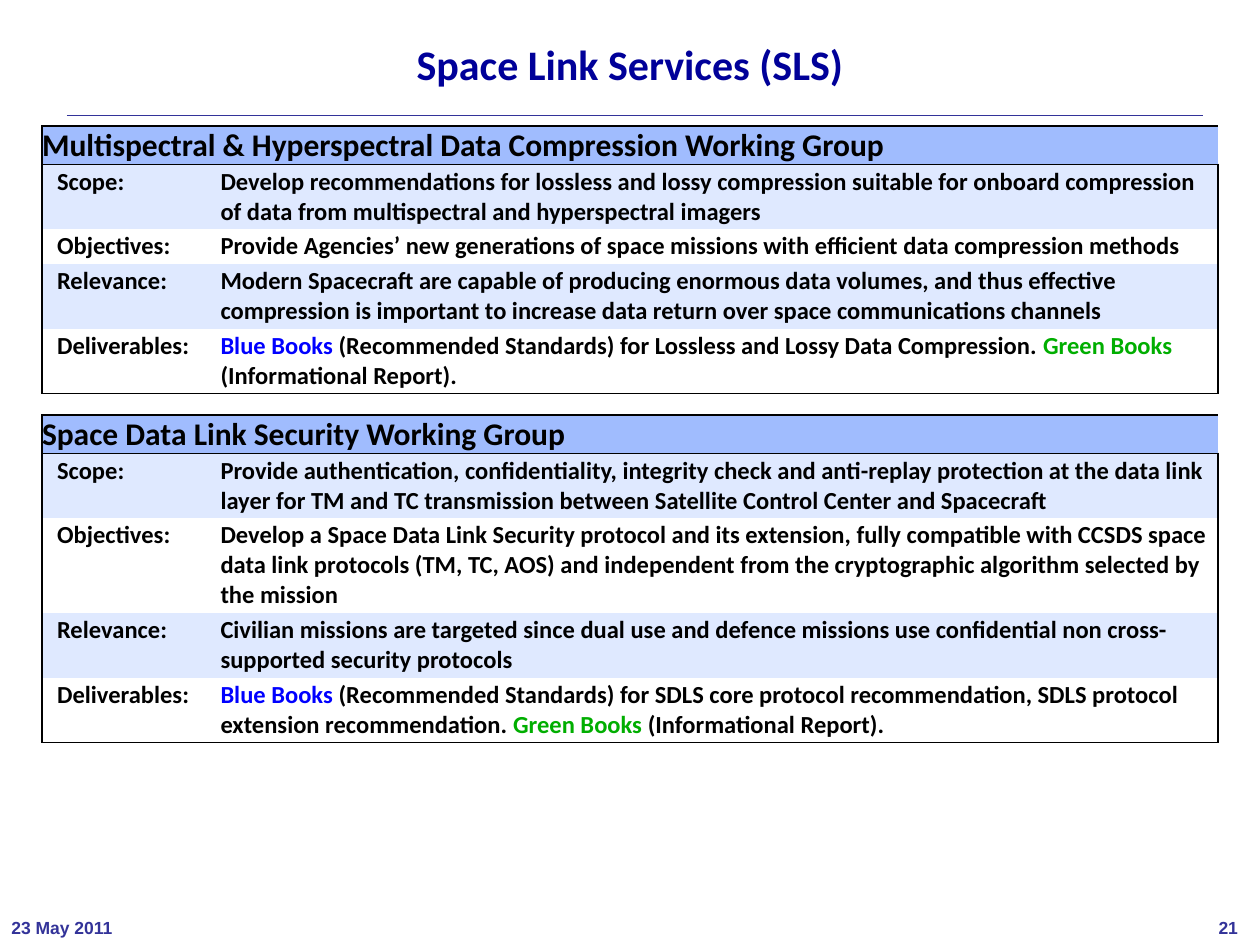
from dataclasses import dataclass

from lxml import etree
from pptx import Presentation
from pptx.dml.color import RGBColor
from pptx.enum.shapes import MSO_CONNECTOR
from pptx.enum.text import MSO_ANCHOR, PP_ALIGN
from pptx.oxml.ns import qn
from pptx.util import Pt

STRAIGHT = MSO_CONNECTOR.STRAIGHT
CENTER = PP_ALIGN.CENTER
TOP = MSO_ANCHOR.TOP


@dataclass(frozen=True)
class Theme:
    body_font: str = "Calibri"
    footer_font: str = "Arial"
    title: str = "000099"
    footer: str = "333399"
    text: str = "000000"
    blue_book: str = "0000FF"
    green_book: str = "00AE00"
    heading_fill: str = "A0BCFE"
    band_fill: str = "DFE9FF"
    border: str = "000000"
    title_size: int = 24
    heading_size: int = 18
    body_size: int = 14
    footer_size: int = 10
    gap_size: int = 10


THEME = Theme()


def deliverables(standards):
    return [
        ("Blue Books ", THEME.blue_book),
        (f"(Recommended Standards) for {standards}. ", THEME.text),
        ("Green Books ", THEME.green_book),
        ("(Informational Report).", THEME.text),
    ]


def plain(text):
    return [(text, THEME.text)]


TITLE = "Space Link Services (SLS)"
LABELS = ["Scope:", "Objectives:", "Relevance:", "Deliverables:"]
# Each group: heading, then (number of text lines, spans) for each label
GROUPS = [
    ("Multispectral & Hyperspectral Data Compression Working Group", [
        (2, plain("Develop recommendations for lossless and lossy compression suitable for "
                  "onboard compression of data from multispectral and hyperspectral imagers")),
        (1, plain("Provide Agencies’ new generations of space missions with efficient data "
                  "compression methods")),
        (2, plain("Modern Spacecraft are capable of producing enormous data volumes, and thus "
                  "effective compression is important to increase data return over space "
                  "communications channels")),
        (2, deliverables("Lossless and Lossy Data Compression")),
    ]),
    ("Space Data Link Security Working Group", [
        (2, plain("Provide authentication, confidentiality, integrity check and anti-replay "
                  "protection at the data link layer for TM and TC transmission between "
                  "Satellite Control Center and Spacecraft")),
        (3, plain("Develop a Space Data Link Security protocol and its extension, fully "
                  "compatible with CCSDS space data link protocols (TM, TC, AOS) and independent "
                  "from the cryptographic algorithm selected by the mission")),
        (2, plain("Civilian missions are targeted since dual use and defence missions use "
                  "confidential non cross-supported security protocols")),
        (2, deliverables("SDLS core protocol recommendation, SDLS protocol extension "
                         "recommendation")),
    ]),
]
FOOTERS = [("23 May 2011", 0, 71.3), ("21", 689.8, 25.2)]

TABLE_LEFT, TABLE_TOP = 24, 72
COLUMN_WIDTHS = [102, 570]
LINE_FACTOR = 1.22
CELL_MARGIN = 1.44
LABEL_INDENT = 8.6


def add_spans(para, spans, size, font_name):
    for text, colour in spans:
        span = para.add_run()
        span.text = text
        span.font.name = font_name
        span.font.size = Pt(size)
        span.font.bold = True
        span.font.color.rgb = RGBColor.from_string(colour)


def set_borders(cell, drawn_sides):
    properties = cell._tc.get_or_add_tcPr()
    for position, side in enumerate("LRTB"):
        line = etree.Element(qn(f"a:ln{side}"), w=str(Pt(1)))
        if side in drawn_sides:
            fill = etree.SubElement(line, qn("a:solidFill"))
            etree.SubElement(fill, qn("a:srgbClr"), val=THEME.border)
        else:
            etree.SubElement(line, qn("a:noFill"))
        properties.insert(position, line)


def format_cell(cell, fill, drawn_sides, margin=0):
    cell.margin_left = cell.margin_right = 0
    cell.margin_top = cell.margin_bottom = Pt(margin)
    if fill:
        cell.fill.solid()
        cell.fill.fore_color.rgb = RGBColor.from_string(fill)
    else:
        cell.fill.background()
    set_borders(cell, drawn_sides)


def fill_wide_row(table, index, size, spans, fill, sides):
    left, right = table.cell(index, 0), table.cell(index, 1)
    left.merge(right)
    table.rows[index].height = Pt(round(size * LINE_FACTOR, 2))
    for cell, side in ((left, "L"), (right, "R")):
        format_cell(cell, fill, sides + side if fill else sides)
    para = left.text_frame.paragraphs[0]
    add_spans(para, spans, size, THEME.body_font)
    if not spans:
        etree.SubElement(para._p, qn("a:endParaRPr"), sz=str(size * 100))


def fill_detail_row(table, index, number, label, line_count, spans):
    height = line_count * THEME.body_size * LINE_FACTOR + 2 * CELL_MARGIN
    table.rows[index].height = Pt(round(height, 2))
    fill = THEME.band_fill if number % 2 == 0 else None
    edges = {0: "T", len(LABELS) - 1: "B"}.get(number, "")
    for column, (side, content) in enumerate((("L", plain(label)), ("R", spans))):
        cell = table.cell(index, column)
        format_cell(cell, fill, side + edges, CELL_MARGIN)
        if column == 0:
            cell.margin_left = Pt(LABEL_INDENT)
        add_spans(cell.text_frame.paragraphs[0], content, THEME.body_size, THEME.body_font)


def add_group_table(slide):
    group_rows = len(LABELS) + 1
    row_count = len(GROUPS) * (group_rows + 1) - 1
    frame = slide.shapes.add_table(row_count, 2, Pt(TABLE_LEFT), Pt(TABLE_TOP),
                                   Pt(sum(COLUMN_WIDTHS)), Pt(row_count))
    table = frame.table
    table.first_row = table.horz_banding = False
    for column, width in zip(table.columns, COLUMN_WIDTHS):
        column.width = Pt(width)
    for group_number, (heading, details) in enumerate(GROUPS):
        start = group_number * (group_rows + 1)
        if group_number:
            fill_wide_row(table, start - 1, THEME.gap_size, [], None, "TB")
        fill_wide_row(table, start, THEME.heading_size, plain(heading),
                      THEME.heading_fill, "TB")
        for number, (label, (line_count, spans)) in enumerate(zip(LABELS, details)):
            fill_detail_row(table, start + 1 + number, number, label, line_count, spans)
    frame.height = sum(row.height for row in table.rows)


def add_title(slide):
    title = slide.shapes.title
    title.left, title.top, title.width, title.height = Pt(36), Pt(21.6), Pt(648), Pt(38)
    title.text_frame.vertical_anchor = TOP
    para = title.text_frame.paragraphs[0]
    para.alignment = CENTER
    para.line_spacing = 0.9
    add_spans(para, [(TITLE, THEME.title)], THEME.title_size, THEME.body_font)


def add_rule(slide):
    rule = slide.shapes.add_connector(STRAIGHT, Pt(38.2), Pt(66), Pt(687.6), Pt(66))
    rule.line.color.rgb = RGBColor.from_string(THEME.footer)
    rule.line.width = Pt(0.13)
    etree.SubElement(rule._element.spPr, qn("a:effectLst"))


def add_footer(slide, text, left, width):
    box = slide.shapes.add_textbox(Pt(left), Pt(521.3), Pt(width), Pt(18.7))
    frame = box.text_frame
    frame.word_wrap = False
    frame.margin_left = frame.margin_right = Pt(6.5)
    frame.margin_top = frame.margin_bottom = Pt(3)
    add_spans(frame.paragraphs[0], [(text, THEME.footer)], THEME.footer_size,
              THEME.footer_font)


def main():
    deck = Presentation()
    deck.slide_width, deck.slide_height = Pt(720), Pt(540)
    slide = deck.slides.add_slide(deck.slide_layouts[5])
    add_rule(slide)
    for footer in FOOTERS:
        add_footer(slide, *footer)
    add_title(slide)
    add_group_table(slide)
    deck.save("out.pptx")


if __name__ == "__main__":
    main()
